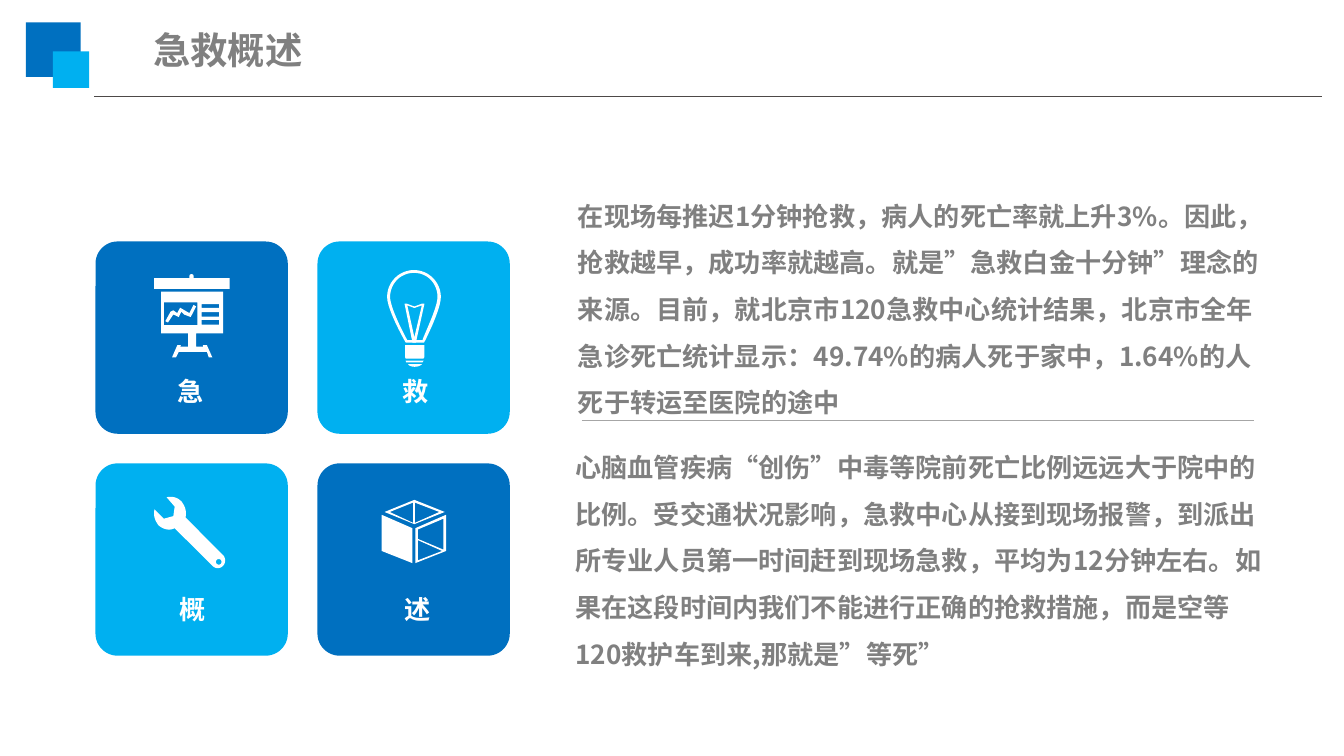
from lxml import etree
from pptx import Presentation
from pptx.dml.color import RGBColor
from pptx.enum.shapes import MSO_CONNECTOR, MSO_SHAPE
from pptx.enum.text import MSO_AUTO_SIZE, PP_ALIGN
from pptx.oxml.ns import qn
from pptx.util import Pt

RECTANGLE = MSO_SHAPE.RECTANGLE
ROUNDED = MSO_SHAPE.ROUNDED_RECTANGLE
STRAIGHT = MSO_CONNECTOR.STRAIGHT
GROW = MSO_AUTO_SIZE.SHAPE_TO_FIT_TEXT
LEFT, CENTER = PP_ALIGN.LEFT, PP_ALIGN.CENTER

BLUE = RGBColor(0x00, 0x70, 0xC0)
SKY = RGBColor(0x00, 0xB0, 0xF0)
WHITE = RGBColor(0xFF, 0xFF, 0xFF)
GRAY = RGBColor(0x80, 0x80, 0x80)
RULE_DARK = RGBColor(0x4D, 0x49, 0x48)
RULE_LIGHT = RGBColor(0xA6, 0xA6, 0xA6)
FONT = "Noto Sans CJK SC"
CURVE_STEPS = 12

presentation = Presentation()
presentation.slide_width = Pt(720)
presentation.slide_height = Pt(405)
slide = presentation.slides.add_slide(presentation.slide_layouts[6])


def add_text(text, left, top, width, height, size, color, align=LEFT,
             inset=(3.6, 1.8), line_spacing=None):
    box = slide.shapes.add_textbox(Pt(left), Pt(top), Pt(width), Pt(height))
    frame = box.text_frame
    frame.word_wrap = True
    frame.auto_size = GROW
    frame.margin_left = frame.margin_right = Pt(inset[0])
    frame.margin_top = frame.margin_bottom = Pt(inset[1])
    paragraph = frame.paragraphs[0]
    paragraph.alignment = align
    if line_spacing:
        paragraph.line_spacing = Pt(line_spacing)
    run = paragraph.add_run()
    run.text = text
    run.font.size = Pt(size)
    run.font.bold = True
    run.font.color.rgb = color
    run.font.name = FONT
    east_asian = etree.SubElement(run.font._element, qn("a:ea"))
    east_asian.set("typeface", FONT)


def add_outline(contours):
    """Each contour lists (x, y) corners and six-number Bézier curves."""
    builder = None
    for contour in contours:
        points = [contour[0]]
        for step in contour[1:]:
            if len(step) == 2:
                points.append(step)
                continue
            x0, y0 = points[-1]
            x1, y1, x2, y2, x3, y3 = step
            for i in range(1, CURVE_STEPS + 1):
                t = i / CURVE_STEPS
                a, b, c, d = (1 - t) ** 3, 3 * t * (1 - t) ** 2, 3 * t * t * (1 - t), t ** 3
                points.append((a * x0 + b * x1 + c * x2 + d * x3,
                               a * y0 + b * y1 + c * y2 + d * y3))
        points = [(Pt(x), Pt(y)) for x, y in points]
        if builder is None:
            builder = slide.shapes.build_freeform(*points[0], scale=1.0)
        else:
            builder.move_to(*points[0])
        builder.add_line_segments(points[1:], close=True)
    shape = builder.convert_to_shape()
    shape.shadow.inherit = False
    shape.fill.solid()
    shape.fill.fore_color.rgb = WHITE
    shape.line.fill.background()
    return shape


# Header squares and the four rounded tiles
TILE_LEFT, TILE_TOP, TILE_SIZE, PITCH = 51.2, 129.4, 103, 118.9
blocks = [(RECTANGLE, 13.9, 12, 29.3, BLUE), (RECTANGLE, 28.3, 27.6, 19.5, SKY)]
for row in range(2):
    for column in range(2):
        blocks.append((ROUNDED, TILE_LEFT + column * PITCH, TILE_TOP + row * PITCH,
                       TILE_SIZE, BLUE if row == column else SKY))
for kind, left, top, size, color in blocks:
    shape = slide.shapes.add_shape(kind, Pt(left), Pt(top), Pt(size), Pt(size))
    if kind == ROUNDED:
        shape.adjustments[0] = 0.115
    shape.shadow.inherit = False
    shape.fill.solid()
    shape.fill.fore_color.rgb = color
    shape.line.fill.background()

# Header rule and divider between the paragraphs
for start, end, y, color in [(50.4, 708, 51.6, RULE_DARK), (311.8, 671.8, 225.2, RULE_LIGHT)]:
    line = slide.shapes.add_connector(STRAIGHT, Pt(start), Pt(y), Pt(end), Pt(y))
    line.line.color.rgb = color
    line.line.width = Pt(0.75)
    etree.SubElement(line._element.spPr, qn("a:effectLst"))

# Presentation board: top bar, stand with windows, trend line
windows = [[(left, top), (right, top), (right, bottom), (left, bottom)]
           for left, top, right, bottom in [(108, 162.9, 117.4, 165), (108, 167.2, 117.4, 169.7),
                                            (108, 171.4, 117.4, 174), (87.8, 162, 105.8, 174.2)]]
board = [
    [[(103.7, 149), (103.7, 147.8), (103.7, 146.6, 101.5, 146.6, 101.5, 147.8), (101.5, 149),
      (82.6, 149), (82.6, 154.8), (123, 154.8), (123, 149)]],
    [[(119.5, 178.6), (119.5, 156.2), (86.4, 156.2), (86.4, 178.6), (100.8, 178.6),
      (100.8, 185.8), (96.5, 185.8), (96.9, 185), (95, 185), (92.2, 191.5), (94.3, 191.5),
      (95.8, 188.6), (110.9, 188.6), (111.9, 191.5), (113.8, 191.5), (110.9, 185),
      (108.7, 185), (109, 185.8), (105.1, 185.8), (105.1, 178.6)]] + windows,
    [[(102.2, 166.3), (101.5, 167.8), (96.5, 164.9), (95, 167.8), (92.9, 166.3),
      (91.4, 167), (88.6, 172.1), (90, 172.8), (92.9, 168.5), (95.8, 169.9), (97.2, 167),
      (98.6, 168.5), (102.2, 169.9), (105.1, 164.2), (103.7, 163.4)]],
]

# Light bulb: glass, socket, two rings, filament
bulb = [
    [[(221.8, 144.7), (213.8, 144.7, 207.4, 151.2, 207.4, 159.1),
      (207.4, 166.3, 217.4, 183.6, 217.4, 183.6), (227.2, 183.6),
      (227.2, 183.6, 236.2, 166.3, 236.2, 159.1), (236.2, 151.2, 229.7, 144.7, 221.8, 144.7)],
     [(221.8, 146.2), (229, 146.2, 234.4, 151.9, 234.4, 159.1),
      (234.4, 164.9, 227.5, 178.6, 226.4, 182.2), (218.2, 182.2),
      (215.3, 177.1, 209, 164.2, 209, 159.1), (209, 151.9, 214.6, 146.2, 221.8, 146.2)]],
    [[(217, 185), (227.3, 185), (227.3, 191.5), (226.8, 192.2), (217.4, 192.2), (217, 191.5)]],
    [[(217.3, 193.2), (227, 193.2), (226.3, 194.2), (217.7, 194.2)]],
    [[(218.6, 195.1), (226, 195.1), (224.6, 197, 219.6, 197, 218.6, 195.1)]],
    [[(227.4, 162.7), (226, 162.7), (222, 164.2), (218, 162.7), (216.7, 162.7),
      (221, 183.6), (222.8, 183.6)],
     [(222, 180.7), (218.2, 163.6), (222, 165), (226, 163.6)]],
]

# Wrench with a hole in its handle
wrench = [
    [[(99.4, 277.2), (100.1, 274.3, 99.4, 271.4, 97.2, 268.6), (95, 266.4, 92.2, 265.7, 89.3, 266.4),
      (93.6, 271.4), (92.9, 276.5), (87.8, 277.9), (82.8, 272.9),
      (82.1, 275.8, 82.8, 278.6, 85, 281.5), (87.8, 283.7, 90.7, 284.4, 93.6, 283),
      (113.8, 303.1), (115.4, 304.8, 118, 304.8, 119.5, 303.1), (121, 301.7, 121, 298.8, 119.5, 297.4)],
     [(115.7, 301), (115.7, 299, 118.7, 299, 118.7, 301), (118.7, 303, 115.7, 303, 115.7, 301)]],
]

# Open box: right, left and top faces
cube = [
    [[(222.5, 283), (222.5, 301.7), (239, 295.2), (239, 275.8)],
     [(237.6, 277.9), (237.6, 294.5), (223.9, 288.7), (223.9, 283.7)],
     [(223.9, 289.4), (236.9, 295.2), (223.9, 300.2)]],
    [[(204.5, 295.2), (221, 301.7), (221, 283), (204.5, 275.8)]],
    [[(222, 267.8), (206, 274.3), (222, 280.8), (238.3, 274.3)],
     [(222.3, 269.3), (235.4, 274.3), (222.3, 280.1)],
     [(221.3, 269.3), (221.3, 280.1), (208.8, 274.3)]],
]

for icon in (board, bulb, wrench, cube):
    parts = [add_outline(contours) for contours in icon]
    if len(parts) > 1:
        slide.shapes.add_group_shape(parts)

# Title and tile labels
add_text("急救概述", 74.9, 10.8, 101.5, 31, 20, GRAY, inset=(7.2, 3.6))
for label, left, top in [("急", 55.7, 199.4), ("救", 176.3, 199.4),
                         ("概", 56.9, 316.1), ("述", 177.1, 316.1)]:
    add_text(label, left, top, 92.9, 20.9, 14, WHITE, CENTER)

# Body paragraphs
for text, left, top in [
    ("在现场每推迟1分钟抢救，病人的死亡率就上升3%。因此，抢救越早，成功率就越高。"
     "就是”急救白金十分钟”理念的来源。目前，就北京市120急救中心统计结果，"
     "北京市全年急诊死亡统计显示：49.74%的病人死于家中，1.64%的人死于转运至医院的途中", 306, 97.2),
    ("心脑血管疾病“创伤”中毒等院前死亡比例远远大于院中的比例。受交通状况影响，"
     "急救中心从接到现场报警，到派出所专业人员第一时间赶到现场急救，平均为12分钟左右。"
     "如果在这段时间内我们不能进行正确的抢救措施，而是空等120救护车到来,那就是”等死”", 304.6, 231.8),
]:
    add_text(text, left, top, 378, 129.6, 14, GRAY, line_spacing=25)

presentation.save("out.pptx")
